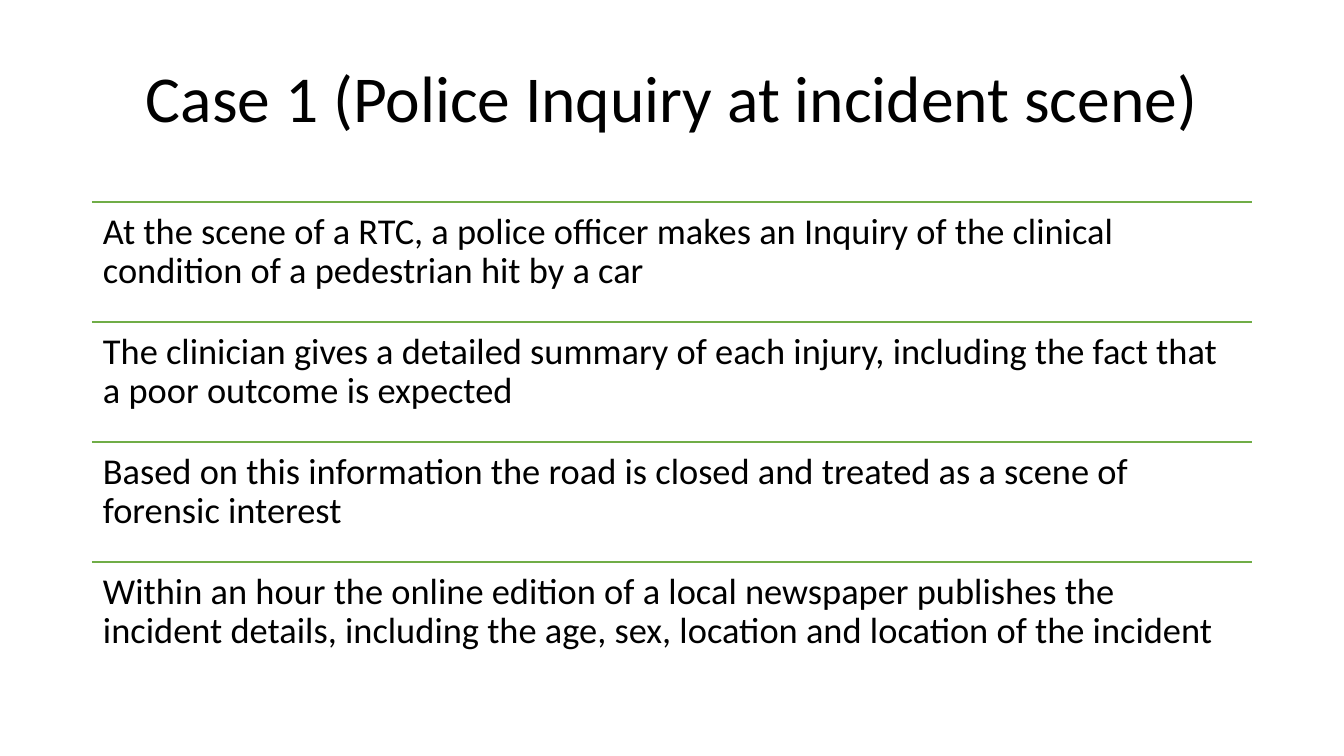
from pptx import Presentation
from pptx.dml.color import RGBColor
from pptx.enum.shapes import MSO_CONNECTOR
from pptx.enum.text import MSO_ANCHOR, MSO_AUTO_SIZE, PP_ALIGN
from pptx.util import Pt
from lxml.etree import SubElement
from pptx.oxml.ns import qn

TITLE = "Case 1 (Police Inquiry at incident scene)"
EVENTS = [
    "At the scene of a RTC, a police officer makes an Inquiry of the clinical "
    "condition of a pedestrian hit by a car",
    "The clinician gives a detailed summary of each injury, including the fact "
    "that a poor outcome is expected",
    "Based on this information the road is closed and treated as a scene of "
    "forensic interest",
    "Within an hour the online edition of a local newspaper publishes the "
    "incident details, including the age, sex, location and location of the "
    "incident",
]
FONT, INK, GREEN = "Calibri", "000000", "70AD47"
LEFT, WIDTH = 92, 1160
TOP, STEP = 202, 120


def px(n):
    return round(n * 914400 / 100.8)


def color(code):
    return RGBColor.from_string(code)


def write(shape, text, size, align=PP_ALIGN.LEFT, inset=(10, 5)):
    """Fill a shape with one paragraph; inset is (sides, top and bottom)."""
    frame = shape.text_frame
    frame.word_wrap = True
    frame.auto_size = MSO_AUTO_SIZE.NONE
    frame.vertical_anchor = MSO_ANCHOR.TOP
    frame.margin_left = frame.margin_right = px(inset[0])
    frame.margin_top = frame.margin_bottom = px(inset[1])
    para = frame.paragraphs[0]
    para.alignment = align
    para.line_spacing = 0.9
    run = para.add_run()
    run.text = text
    run.font.name = FONT
    run.font.size = Pt(size)
    run.font.color.rgb = color(INK)


def rule(slide, y):
    line = slide.shapes.add_connector(
        MSO_CONNECTOR.STRAIGHT, px(LEFT), px(y), px(LEFT + WIDTH), px(y))
    line.line.color.rgb = color(GREEN)
    line.line.width = Pt(1)
    SubElement(line._element.spPr, qn("a:effectLst"))


def main():
    deck = Presentation()
    deck.slide_width, deck.slide_height = px(1344), px(756)
    slide = deck.slides.add_slide(deck.slide_layouts[5])

    title = slide.shapes.title
    title.left, title.top = px(LEFT), px(61)
    title.width, title.height = px(WIDTH), px(125)
    write(title, TITLE, 46.8, align=PP_ALIGN.CENTER)

    for i, event in enumerate(EVENTS):
        y = TOP + i * STEP
        rule(slide, y)
        box = slide.shapes.add_textbox(px(LEFT), px(y), px(WIDTH), px(STEP))
        write(box, event, 26, inset=(11, 11))

    deck.save("out.pptx")


if __name__ == "__main__":
    main()
